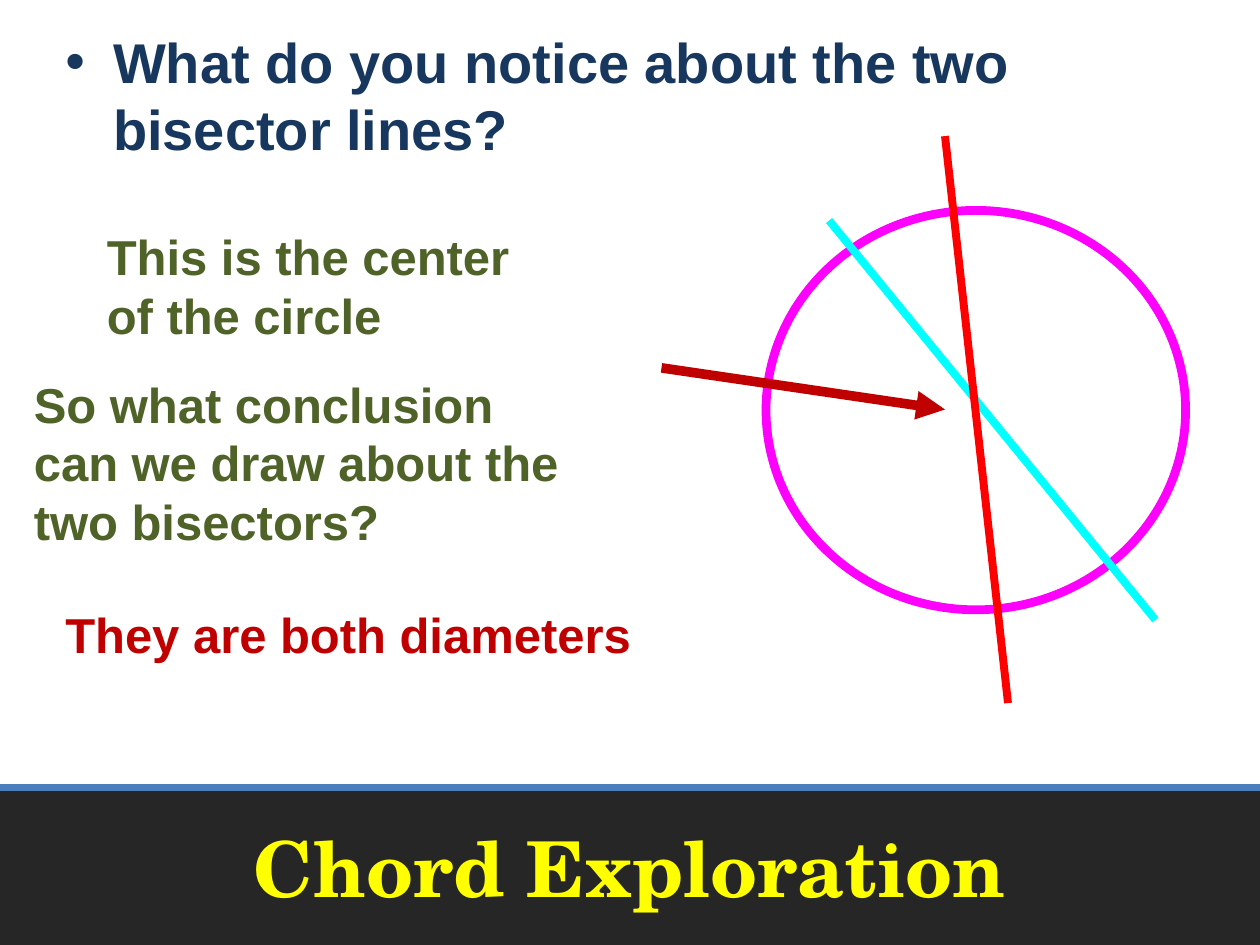
from lxml import etree
from pptx import Presentation
from pptx.dml.color import RGBColor
from pptx.enum.shapes import MSO_CONNECTOR, MSO_SHAPE
from pptx.enum.text import MSO_ANCHOR, MSO_AUTO_SIZE, PP_ALIGN
from pptx.oxml.ns import qn
from pptx.util import Inches, Pt

LINE = MSO_CONNECTOR.STRAIGHT
RECT, OVAL = MSO_SHAPE.RECTANGLE, MSO_SHAPE.OVAL
TOP, MIDDLE = MSO_ANCHOR.TOP, MSO_ANCHOR.MIDDLE
LEFT, CENTER = PP_ALIGN.LEFT, PP_ALIGN.CENTER
FIT, FIXED = MSO_AUTO_SIZE.SHAPE_TO_FIT_TEXT, MSO_AUTO_SIZE.NONE
NAVY, GREEN, CRIMSON = "17375E", "4F6228", "C00000"


def color(code):
    return RGBColor.from_string(code)


def write(frame, text, size=28, font="Arial", ink=GREEN, align=LEFT,
          anchor=TOP, fit=FIT):
    frame.word_wrap = True
    frame.auto_size = fit
    frame.vertical_anchor = anchor
    para = frame.paragraphs[0]
    para.alignment = align
    run = para.add_run()
    run.text = text
    run.font.size = Pt(size)
    run.font.name = font
    run.font.bold = True
    run.font.color.rgb = color(ink)
    return para


def add_text(slide, box, text, **style):
    area = slide.shapes.add_textbox(*map(Inches, box))
    return write(area.text_frame, text, **style)


def add_bullet(para, ink, indent):
    props = para._p.get_or_add_pPr()
    props.set("marL", str(Inches(indent)))
    props.set("indent", str(-Inches(indent)))
    tint = etree.SubElement(props, qn("a:buClr"))
    etree.SubElement(tint, qn("a:srgbClr"), val=ink)
    etree.SubElement(props, qn("a:buFont"), typeface="Arial")
    etree.SubElement(props, qn("a:buChar"), char="•")


def add_shape(slide, kind, box, fill=None, edge=None, width=1):
    shape = slide.shapes.add_shape(kind, *map(Inches, box))
    shape.shadow.inherit = False
    if fill:
        shape.fill.solid()
        shape.fill.fore_color.rgb = color(fill)
    else:
        shape.fill.background()
    if edge:
        shape.line.color.rgb = color(edge)
        shape.line.width = Pt(width)
    else:
        shape.line.fill.background()


def add_line(slide, start, end, ink, width, arrow=False):
    line = slide.shapes.add_connector(LINE, *map(Inches, start + end))
    line.line.color.rgb = color(ink)
    line.line.width = Pt(width)
    if arrow:
        etree.SubElement(line.line._get_or_add_ln(), qn("a:tailEnd"),
                         type="triangle")
    etree.SubElement(line.element.spPr, qn("a:effectLst"))


def add_title(slide, box, text):
    title = slide.shapes.title
    title.left, title.top, title.width, title.height = map(Inches, box)
    write(title.text_frame, text, size=44, font="TeX Gyre Schola",
          ink="FFFF00", align=CENTER, anchor=MIDDLE, fit=FIXED)
    # Bring the title in front of the dark band
    title.element.getparent().append(title.element)


def add_footer(slide):
    add_shape(slide, RECT, (0, 6.25, 10, 1.25), fill="262626")
    add_line(slide, (0, 6.25), (10, 6.25), "4B7EBC", 4)
    add_title(slide, (0.25, 6.25, 9.5, 1.25), "Chord Exploration")


def add_question(slide):
    para = add_text(slide, (0.42, 0.17, 9, 1.33),
                    "What do you notice about the two bisector lines?",
                    size=32, ink=NAVY, fit=FIXED)
    para.space_before = Pt(6.4)
    add_bullet(para, NAVY, 0.38)


def add_circle(slide):
    add_shape(slide, OVAL, (6.08, 1.67, 3.33, 3.17), edge="FF00FF", width=5)
    add_line(slide, (6.58, 1.75), (9.17, 4.92), "00FFFF", 4.5)
    add_line(slide, (7.5, 1.08), (8, 5.58), "FF0000", 4.5)


def main():
    deck = Presentation()
    deck.slide_width, deck.slide_height = Inches(10), Inches(7.5)
    slide = deck.slides.add_slide(deck.slide_layouts[5])
    add_footer(slide)
    add_question(slide)
    add_circle(slide)
    add_text(slide, (0.75, 1.75, 3.5, 1.03),
             "This is the center of the circle")
    add_line(slide, (5.25, 2.92), (7.5, 3.25), CRIMSON, 5.5, arrow=True)
    add_text(slide, (0.17, 2.92, 4.52, 1.5),
             "So what conclusion can we draw about the two bisectors?")
    add_text(slide, (0.42, 4.75, 5.67, 0.57),
             "They are both diameters", ink=CRIMSON)
    deck.save("out.pptx")


if __name__ == "__main__":
    main()
